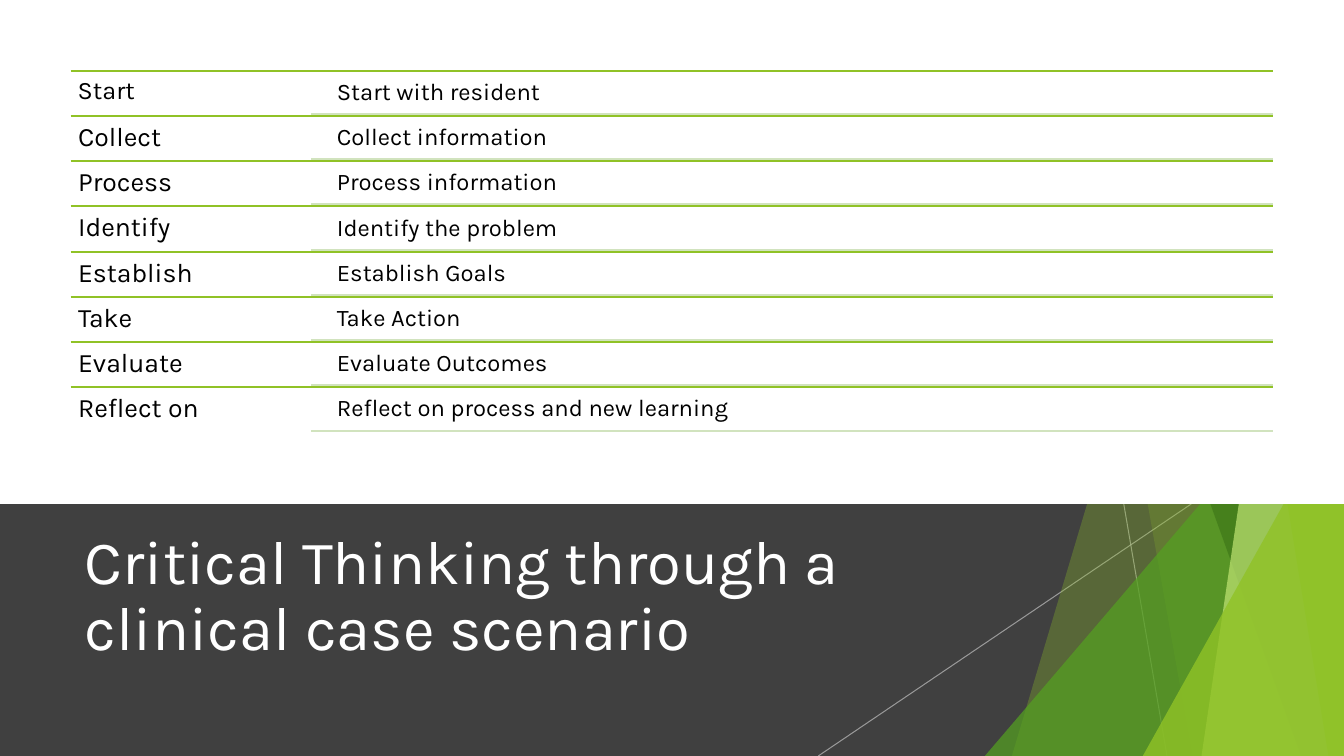
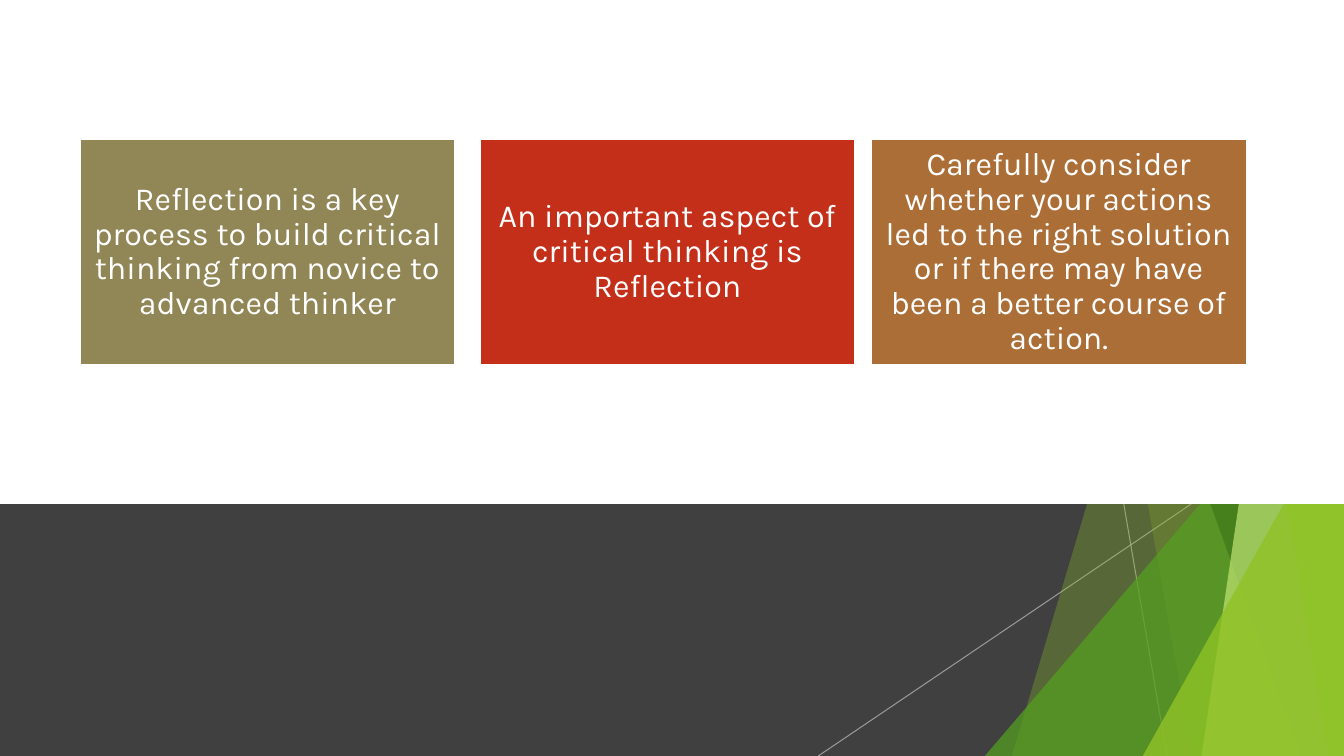
"""Build two slides on critical thinking that share a dark band with green shards."""
from lxml import etree
from pptx import Presentation
from pptx.dml.color import RGBColor
from pptx.enum.shapes import MSO_CONNECTOR, MSO_SHAPE
from pptx.enum.text import MSO_ANCHOR, MSO_AUTO_SIZE, PP_ALIGN
from pptx.oxml.ns import qn
from pptx.util import Cm, Pt

RECTANGLE, TRIANGLE = MSO_SHAPE.RECTANGLE, MSO_SHAPE.ISOSCELES_TRIANGLE
STRAIGHT = MSO_CONNECTOR.STRAIGHT
TOP, MIDDLE = MSO_ANCHOR.TOP, MSO_ANCHOR.MIDDLE
LEFT, CENTER = PP_ALIGN.LEFT, PP_ALIGN.CENTER
NO_AUTOFIT = MSO_AUTO_SIZE.NONE

FONT = "Karla"
WHITE = RGBColor(0xFF, 0xFF, 0xFF)
BLACK = RGBColor(0x00, 0x00, 0x00)
CHARCOAL = RGBColor(0x40, 0x40, 0x40)
SILVER = RGBColor(0xBF, 0xBF, 0xBF)
LIME = RGBColor(0x90, 0xC2, 0x26)
GREEN = RGBColor(0x54, 0xA0, 0x21)
FOREST = RGBColor(0x3F, 0x78, 0x19)
PALE_LIME = RGBColor(0xC0, 0xE4, 0x74)
PALE_GREEN = RGBColor(0xD1, 0xE3, 0xBE)
OLIVE = RGBColor(0x91, 0x86, 0x55)
RED = RGBColor(0xC4, 0x2F, 0x1A)
BROWN = RGBColor(0xAB, 0x6E, 0x37)

TITLE = "Critical Thinking through a clinical case scenario"
STEPS = [
    ("Start", "Start with resident"),
    ("Collect", "Collect information"),
    ("Process", "Process information"),
    ("Identify", "Identify the problem"),
    ("Establish", "Establish Goals"),
    ("Take", "Take Action"),
    ("Evaluate", "Evaluate Outcomes"),
    ("Reflect on", "Reflect on process and new learning"),
]
CARDS = [
    (2.01, OLIVE, "Reflection is a key process to build critical thinking "
                  "from novice to advanced thinker"),
    (12.09, RED, "An important aspect of critical thinking is Reflection"),
    (21.95, BROWN, "Carefully consider whether your actions led to the right "
                   "solution or if there may have been a better course of action."),
]

WIDTH, HEIGHT, BAND_TOP = 33.87, 19.05, 12.7
RAYS = [(28.32, 29.41), (30.02, 20.62)]
SHARDS = [
    ("sliver", 31.19, 25.5, LIME, 30),
    ("sliver", 26.67, 30.05, LIME, 20),
    ("triangle", 8.46, 24.82, GREEN, 72),
    ("sliver", 25.93, 32.79, FOREST, 70),
    ("sliver", 33.1, 30.28, PALE_LIME, 70),
    ("sliver", 30.38, 33.48, LIME, 65),
    ("triangle", 9.98, 28.8, LIME, 80),
]
ROWS_LEFT, ROWS_RIGHT, ROWS_TOP, ROW_HEIGHT = 1.78, 32.08, 1.78, 1.14
DETAIL_RULE_LEFT, DETAIL_LEFT, DETAIL_INSET = 7.85, 8.31, 0.05
CARD_TOP, CARD_WIDTH, CARD_HEIGHT = 3.51, 9.47, 5.69


def set_opacity(shape, percent):
    color = next(shape.element.spPr.iter(qn("a:srgbClr")))
    etree.SubElement(color, qn("a:alpha"), val=str(percent * 1000))


def paint(shape, color):
    shape.shadow.inherit = False
    shape.fill.solid()
    shape.fill.fore_color.rgb = color
    shape.line.fill.background()


def add_block(page, preset, left, top, width, height, color):
    block = page.shapes.add_shape(preset, Cm(left), Cm(top), Cm(width), Cm(height))
    paint(block, color)
    return block


def add_rule(page, x1, y1, x2, y2, color, weight):
    rule = page.shapes.add_connector(STRAIGHT, Cm(x1), Cm(y1), Cm(x2), Cm(y2))
    rule.line.color.rgb = color
    rule.line.width = Pt(weight)
    etree.SubElement(rule.element.spPr, qn("a:effectLst"))
    return rule


def add_sliver(page, top_x, bottom_x, color):
    builder = page.shapes.build_freeform(Cm(top_x), 0)
    corners = [(WIDTH, 0), (WIDTH, HEIGHT), (bottom_x, HEIGHT)]
    builder.add_line_segments([(Cm(x), Cm(y)) for x, y in corners], close=True)
    sliver = builder.convert_to_shape()
    paint(sliver, color)
    return sliver


def write(shape, text, size, color, anchor=TOP, align=LEFT, inset=None):
    frame = shape.text_frame
    frame.text = text
    frame.word_wrap = True
    frame.auto_size = NO_AUTOFIT
    frame.vertical_anchor = anchor
    if inset is not None:
        frame.margin_left = frame.margin_right = Cm(inset)
        frame.margin_top = frame.margin_bottom = Cm(inset)
    para = frame.paragraphs[0]
    para.alignment = align
    para.line_spacing = 0.9
    font = para.runs[0].font
    font.name, font.size, font.color.rgb = FONT, Pt(size), color


def add_label(page, text, left, top, width, height, size, inset):
    box = page.shapes.add_textbox(Cm(left), Cm(top), Cm(width), Cm(height))
    write(box, text, size, BLACK, inset=inset)


def add_page(deck, layout_index):
    page = deck.slides.add_slide(deck.slide_layouts[layout_index])
    add_block(page, RECTANGLE, 0, BAND_TOP, WIDTH, HEIGHT - BAND_TOP, CHARCOAL)
    for top_x, bottom_x in RAYS:
        ray = add_rule(page, top_x, BAND_TOP, bottom_x, HEIGHT, SILVER, 0.75)
        set_opacity(ray, 70)
    for kind, start, bottom_x, color, opacity in SHARDS:
        if kind == "sliver":
            shard = add_sliver(page, start, bottom_x, color)
        else:
            shard = add_block(page, TRIANGLE, bottom_x, start,
                              WIDTH - bottom_x, HEIGHT - start, color)
            shard.adjustments[0] = 1
        set_opacity(shard, opacity)
    panel = add_block(page, RECTANGLE, 0, 0, WIDTH, BAND_TOP, WHITE)
    title = page.shapes.title
    if title is not None:
        panel.element.addprevious(title.element)
    return page


def build_steps(deck):
    page = add_page(deck, 5)
    title = page.shapes.title
    title.left, title.top, title.width, title.height = Cm(1.88), Cm(13.23), Cm(23.88), Cm(3.66)
    write(title, TITLE, 44, WHITE, anchor=MIDDLE)
    for index, (step, detail) in enumerate(STEPS):
        top = ROWS_TOP + index * ROW_HEIGHT
        detail_top = top + DETAIL_INSET
        detail_height = ROW_HEIGHT - 2 * DETAIL_INSET
        detail_bottom = detail_top + detail_height
        size, inset = (19, 0.19) if index else (18, 0.18)
        add_rule(page, ROWS_LEFT, top, ROWS_RIGHT, top, LIME, 1.5)
        add_label(page, step, ROWS_LEFT, top, DETAIL_RULE_LEFT - ROWS_LEFT,
                  ROW_HEIGHT, size, inset)
        add_label(page, detail, DETAIL_LEFT, detail_top, ROWS_RIGHT - DETAIL_LEFT,
                  detail_height, 17, 0.18)
        add_rule(page, DETAIL_RULE_LEFT, detail_bottom, ROWS_RIGHT, detail_bottom,
                 PALE_GREEN, 1.5)


def build_reflection(deck):
    page = add_page(deck, 6)
    for left, color, text in CARDS:
        card = add_block(page, RECTANGLE, left, CARD_TOP, CARD_WIDTH, CARD_HEIGHT, color)
        card.line.color.rgb = WHITE
        card.line.width = Pt(1.5)
        write(card, text, 23, WHITE, MIDDLE, CENTER, 0.25)


def main():
    deck = Presentation()
    deck.slide_width, deck.slide_height = Cm(WIDTH), Cm(HEIGHT)
    build_steps(deck)
    build_reflection(deck)
    deck.save("out.pptx")


if __name__ == "__main__":
    main()
